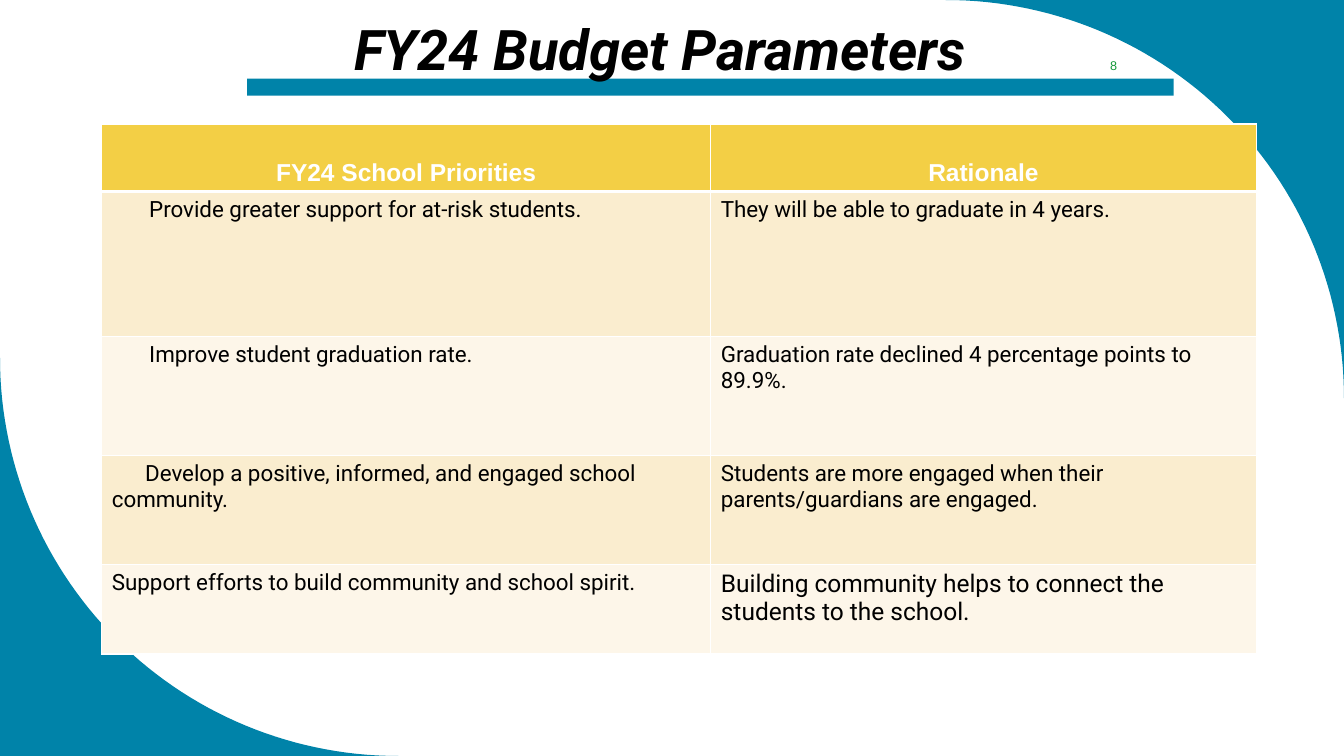
from math import cos, radians, sin

from lxml.etree import SubElement
from pptx import Presentation
from pptx.dml.color import RGBColor
from pptx.enum.shapes import MSO_SHAPE as Shape
from pptx.enum.text import MSO_ANCHOR as Anchor, MSO_AUTO_SIZE as AutoSize, PP_ALIGN as Align
from pptx.oxml.ns import qn
from pptx.util import Inches, Pt

TEAL, GOLD, WHITE, BLACK = "0083A9", "F3CF45", "FFFFFF", "000000"
BANDS = ["FAEDCF", "FDF6E9"]


def color(value):
    return RGBColor.from_string(value)


def write(frame, text, font, size, ink, align=Align.LEFT, **styles):
    frame.word_wrap = True
    paragraph = frame.paragraphs[0]
    paragraph.alignment = align
    run = paragraph.add_run()
    run.text = text
    run.font.color.rgb = color(ink)
    values = {"name": font, "size": Pt(size), "bold": False, "italic": False, **styles}
    for name, value in values.items():
        setattr(run.font, name, value)
    return paragraph


presentation = Presentation()
presentation.slide_width, presentation.slide_height = Inches(13.33), Inches(7.5)
slide = presentation.slides.add_slide(presentation.slide_layouts[5])
shapes = slide.shapes

# Curved corners: corner point, arc centre, first angle of the quarter circle
RADIUS = 3.95
corners = [((13.33, 0), (9.38, 3.95), -90), ((0, 7.5), (3.95, 3.55), 90)]
decorations = []
for corner, (center_x, center_y), first_angle in corners:
    arc = []
    for step in range(61):
        angle = radians(first_angle + 1.5 * step)
        arc.append((Inches(center_x + RADIUS * cos(angle)), Inches(center_y + RADIUS * sin(angle))))
    builder = shapes.build_freeform(Inches(corner[0]), Inches(corner[1]))
    builder.add_line_segments(arc, close=True)
    decorations.append(builder.convert_to_shape())

# Bar under the title
decorations.append(shapes.add_shape(
    Shape.RECTANGLE, Inches(2.45), Inches(0.78), Inches(9.19), Inches(0.17)))
for shape in decorations:
    shape.shadow.inherit = False
    shape.fill.solid()
    shape.fill.fore_color.rgb = color(TEAL)
    shape.line.fill.background()

# Title, in front of the bar
title = shapes.title
title.left, title.top, title.width, title.height = map(Inches, (3.05, 0.09, 6.99, 0.77))
title.text_frame.auto_size = AutoSize.NONE
title.text_frame.vertical_anchor = Anchor.TOP
write(title.text_frame, "FY24 Budget Parameters", "Roboto", 40, BLACK, Align.CENTER,
      bold=True, italic=True)
decorations[-1]._element.addnext(title._element)

# Priorities table: left text, right text, left indent, first line indent, right text size
headings = ["FY24 School Priorities", "Rationale"]
priorities = [
    ("Provide greater support for at-risk students.",
     "They will be able to graduate in 4 years.", 0.37, 0, 16),
    ("Improve student graduation rate.",
     "Graduation rate declined 4 percentage points to 89.9%.", 0.37, 0, 16),
    ("Develop a positive, informed, and engaged school community.",
     "Students are more engaged when their parents/guardians are engaged.", 0, 0.33, 16),
    ("Support efforts to build community and school spirit.",
     "Building community helps to connect the students to the school.", 0, 0, 17.5),
]
column_widths = [6.04, 5.41]
row_heights = [0.67, 1.44, 1.18, 1.08, 0.89]
table = shapes.add_table(len(row_heights), len(column_widths), Inches(1.01), Inches(1.23),
                         Inches(sum(column_widths)), Inches(sum(row_heights))).table
for column, width in zip(table.columns, column_widths):
    column.width = Inches(width)
for row, height in zip(table.rows, row_heights):
    row.height = Inches(height)

for cell, heading in zip(table.rows[0].cells, headings):
    cell.vertical_anchor = Anchor.BOTTOM
    write(cell.text_frame, heading, "Arial", 17.5, WHITE, Align.CENTER, bold=True)

for index, (priority, rationale, indent, first_line, size) in enumerate(priorities, 1):
    paragraph = write(table.cell(index, 0).text_frame, priority, "Roboto", 16, BLACK)
    properties = paragraph._p.get_or_add_pPr()
    properties.set("marL", str(Inches(indent)))
    properties.set("indent", str(Inches(first_line)))
    write(table.cell(index, 1).text_frame, rationale, "Roboto", size, BLACK)

# Cell borders and fills, with a thick line under the header
for index, row in enumerate(table.rows):
    for cell in row.cells:
        properties = cell._tc.get_or_add_tcPr()
        for side in ("lnL", "lnR", "lnT", "lnB"):
            thick = (index, side) in [(0, "lnB"), (1, "lnT")]
            line = SubElement(properties, qn("a:" + side), w=str(Pt(3 if thick else 1)))
            fill = SubElement(line, qn("a:solidFill"))
            SubElement(fill, qn("a:srgbClr"), val=WHITE)
        cell.fill.solid()
        cell.fill.fore_color.rgb = color(BANDS[(index - 1) % 2] if index else GOLD)

# Slide number
number = shapes.add_textbox(Inches(10.64), Inches(0.5), Inches(0.81), Inches(0.3))
number.text_frame.vertical_anchor = Anchor.MIDDLE
write(number.text_frame, "8", "Arial", 9, "159839", Align.CENTER)

presentation.save("out.pptx")
